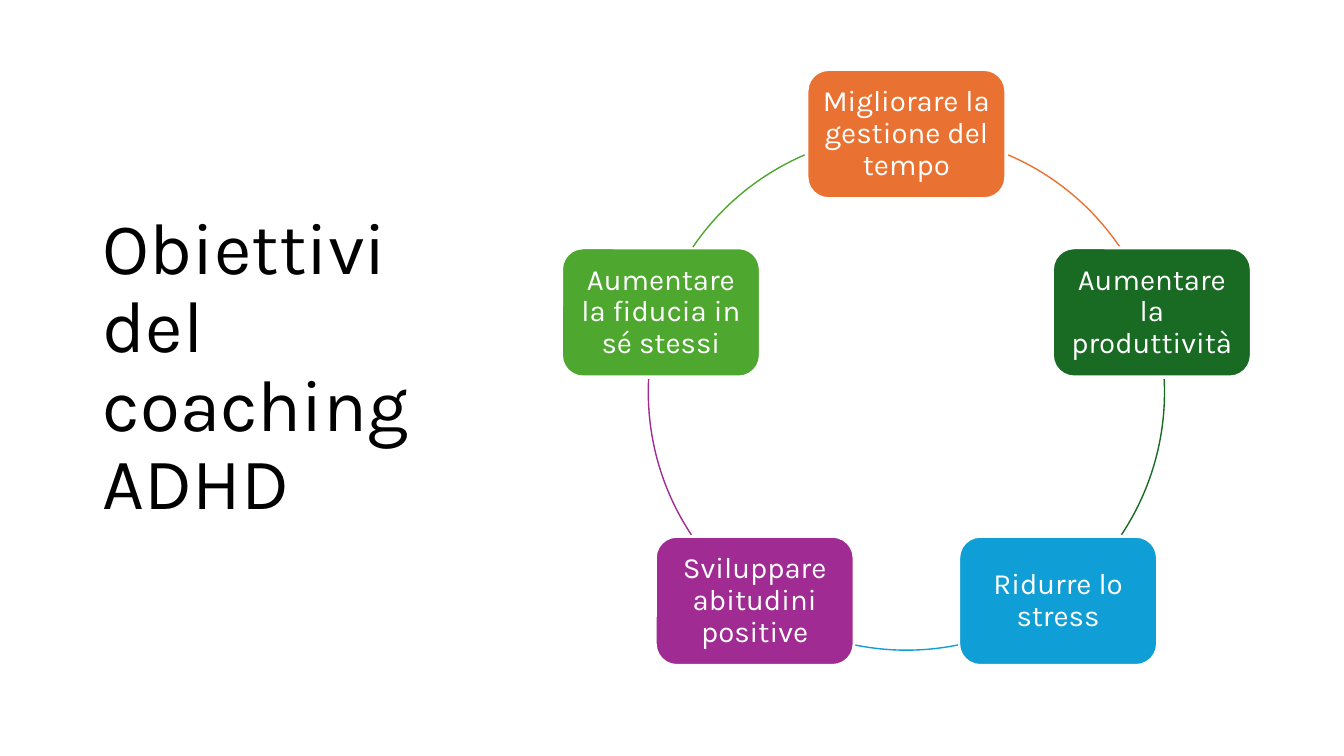
from dataclasses import dataclass
from math import cos, radians, sin

from pptx import Presentation
from pptx.dml.color import RGBColor
from pptx.enum.shapes import MSO_SHAPE
from pptx.enum.text import MSO_ANCHOR, MSO_AUTO_SIZE, PP_ALIGN
from pptx.slide import Slide
from pptx.text.text import TextFrame
from pptx.util import Inches, Pt

CENTER_X, CENTER_Y, RADIUS = 8.99, 3.89, 2.56
CARD_W, CARD_H = 1.97, 1.28


@dataclass
class Goal:
    text: str
    color: str
    arc_start: float
    arc_end: float


GOALS = [
    Goal("Migliorare la gestione del tempo", "E97132", 293.2, 325.8),
    Goal("Aumentare la produttività", "196B24", 357.1, 33.6),
    Goal("Ridurre lo stress", "0F9ED5", 78.5, 101.5),
    Goal("Sviluppare abitudini positive", "A02B93", 146.4, 182.9),
    Goal("Aumentare la fiducia in sé stessi", "4EA72E", 214.2, 246.8),
]


def rgb(value: str) -> RGBColor:
    return RGBColor.from_string(value)


def write(tf: TextFrame, text: str, *, size: float, color: str,
          align: PP_ALIGN, inset: float) -> None:
    tf.word_wrap = True
    tf.auto_size = MSO_AUTO_SIZE.NONE
    tf.vertical_anchor = MSO_ANCHOR.MIDDLE
    tf.margin_left = tf.margin_right = Inches(inset)
    tf.margin_top = tf.margin_bottom = Inches(min(inset, 0.09))
    p = tf.paragraphs[0]
    p.alignment = align
    p.line_spacing = 0.9
    p.space_before = Pt(0)
    r = p.add_run()
    r.text = text
    r.font.name = "Karla"
    r.font.size = Pt(size)
    r.font.color.rgb = rgb(color)


def add_card(s: Slide, goal: Goal, angle: float) -> None:
    x = CENTER_X + RADIUS * cos(radians(angle))
    y = CENTER_Y + RADIUS * sin(radians(angle))
    sp = s.shapes.add_shape(
        MSO_SHAPE.ROUNDED_RECTANGLE, Inches(x - CARD_W / 2),
        Inches(y - CARD_H / 2), Inches(CARD_W), Inches(CARD_H))
    sp.shadow.inherit = False
    sp.fill.solid()
    sp.fill.fore_color.rgb = rgb(goal.color)
    sp.line.color.rgb = rgb("FFFFFF")
    sp.line.width = Pt(2)
    write(sp.text_frame, goal.text, size=21, color="FFFFFF",
          align=PP_ALIGN.CENTER, inset=0.09)


def add_arc(s: Slide, goal: Goal) -> None:
    sp = s.shapes.add_shape(
        MSO_SHAPE.ARC, Inches(CENTER_X - RADIUS), Inches(CENTER_Y - RADIUS),
        Inches(2 * RADIUS), Inches(2 * RADIUS))
    sp.shadow.inherit = False
    sp.fill.background()
    sp.line.color.rgb = rgb(goal.color)
    sp.line.width = Pt(1)
    sp.adjustments[0] = goal.arc_start * 0.6
    sp.adjustments[1] = goal.arc_end * 0.6


def main() -> None:
    prs = Presentation()
    prs.slide_width, prs.slide_height = Inches(13.33), Inches(7.5)
    s = prs.slides.add_slide(prs.slide_layouts[5])
    title = s.shapes.title
    title.left, title.top = Inches(0.92), Inches(0.61)
    title.width, title.height = Inches(3.69), Inches(6.09)
    write(title.text_frame, "Obiettivi del coaching ADHD", size=52,
          color="000000", align=PP_ALIGN.LEFT, inset=0.1)
    for i, goal in enumerate(GOALS):
        add_card(s, goal, -90 + i * 360 / len(GOALS))
        add_arc(s, goal)
    prs.save("out.pptx")


if __name__ == "__main__":
    main()
